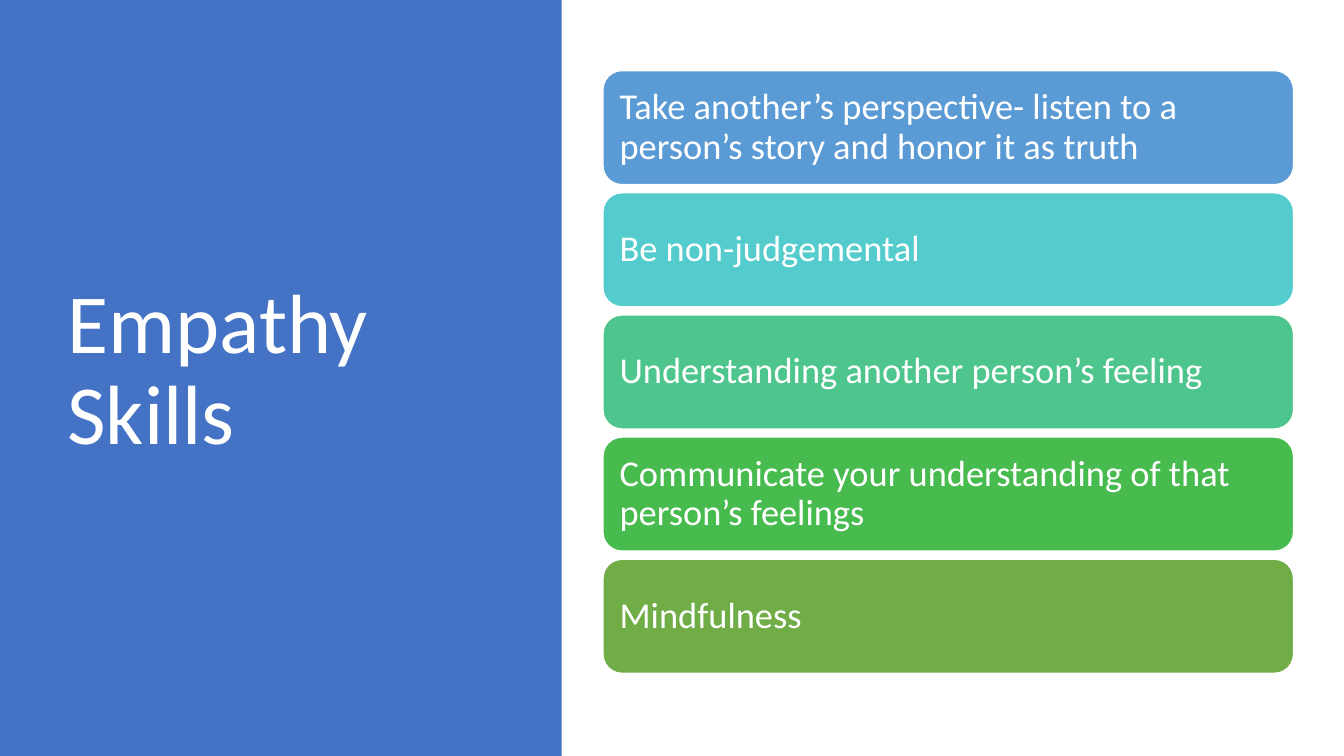
from dataclasses import dataclass

from pptx import Presentation
from pptx.dml.color import RGBColor
from pptx.enum.shapes import MSO_SHAPE
from pptx.enum.text import MSO_ANCHOR, PP_ALIGN
from pptx.util import Inches, Pt


@dataclass(frozen=True)
class Theme:
    font: str = "Calibri"
    title_size: int = 60
    skill_size: int = 26
    white: str = "FFFFFF"
    panel: str = "4472C4"
    skill_fills: tuple = ("5B9BD5", "54CCCD", "4DC58D", "48BB4F", "70AD47")


THEME = Theme()
SKILLS = (
    "Take another’s perspective- listen to a person’s story and honor it as truth",
    "Be non-judgemental",
    "Understanding another person’s feeling",
    "Communicate your understanding of that person’s feelings",
    "Mindfulness",
)


def write_text(shape, text, *, size, inset_x, inset_y):
    """Fill a shape with one left-aligned, vertically centred paragraph."""
    frame = shape.text_frame
    frame.word_wrap = True
    frame.vertical_anchor = MSO_ANCHOR.MIDDLE
    frame.margin_left = frame.margin_right = Inches(inset_x)
    frame.margin_top = frame.margin_bottom = Inches(inset_y)
    para = frame.paragraphs[0]
    para.alignment = PP_ALIGN.LEFT
    para.line_spacing = 0.9
    span = para.add_run()
    span.text = text
    span.font.name = THEME.font
    span.font.size = Pt(size)
    span.font.color.rgb = RGBColor.from_string(THEME.white)


def add_block(page, kind, box, *, fill, line=None):
    """Draw a flat filled shape, outlined if a line colour is given."""
    block = page.shapes.add_shape(kind, *map(Inches, box))
    block.shadow.inherit = False
    block.fill.solid()
    block.fill.fore_color.rgb = RGBColor.from_string(fill)
    if line:
        block.line.color.rgb = RGBColor.from_string(line)
        block.line.width = Pt(1)
    else:
        block.line.fill.background()
    return block


def add_title_panel(page, box, title):
    """Coloured side panel with the slide title."""
    left, top, width, height = box
    add_block(page, MSO_SHAPE.RECTANGLE, box, fill=THEME.panel)
    title_box = page.shapes.add_textbox(
        Inches(left + 0.57), Inches(top + 0.68),
        Inches(width - 1.41), Inches(height - 1.48))
    write_text(title_box, title, size=THEME.title_size, inset_x=0.1, inset_y=0.05)


def add_skill_list(page, box, skills, gap=0.08):
    """Equal rounded cards stacked down the box."""
    left, top, width, height = box
    card_height = (height - gap * (len(skills) - 1)) / len(skills)
    for index, (skill, fill) in enumerate(zip(skills, THEME.skill_fills)):
        card_box = (left, top + index * (card_height + gap), width, card_height)
        card = add_block(page, MSO_SHAPE.ROUNDED_RECTANGLE, card_box,
                         fill=fill, line=THEME.white)
        write_text(card, skill, size=THEME.skill_size, inset_x=0.11, inset_y=0.11)


def main():
    deck = Presentation()
    deck.slide_width, deck.slide_height = Inches(13.33), Inches(7.5)
    page = deck.slides.add_slide(deck.slide_layouts[6])
    add_title_panel(page, (0, 0, 5.57, 7.5), "Empathy Skills")
    add_skill_list(page, (5.98, 0.7, 6.85, 5.98), SKILLS)
    deck.save("out.pptx")


if __name__ == "__main__":
    main()
